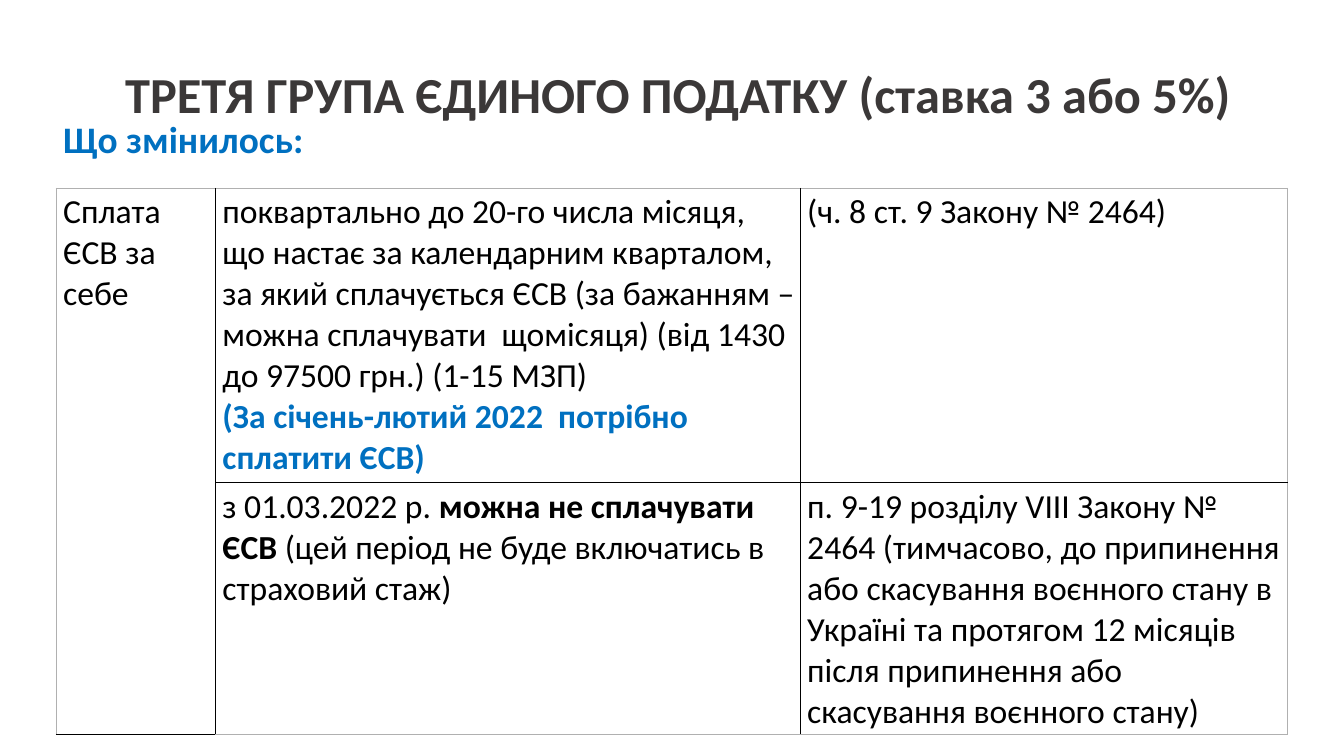
import pptx
import pptx.util
import pptx.dml.color
import pptx.enum.text
import pptx.oxml
import pptx.oxml.ns

FONT = "Calibri"
BLACK, BLUE, GREY, FRAME = "000000", "0070C0", "3B3838", "B0B0B0"
INSETS = (4.8, 2.4, 4, 2.4)  # points: left, top, right, bottom
COLUMNS = (1.58, 5.8, 4.83)
ROWS = (2.92, 2.5)

# Each cell is a list of paragraphs, each paragraph a list of (text, bold, colour).
PAYMENT_CELLS = {
    (0, 0): [[("Сплата ЄСВ за себе", False, BLACK)]],
    (0, 1): [
        [("поквартально до 20-го числа місяця, що настає за календарним кварталом, "
          "за який сплачується ЄСВ (за бажанням – можна сплачувати  щомісяця) "
          "(від 1430 до 97500 грн.) (1-15 МЗП)", False, BLACK)],
        [("(За січень-лютий 2022  потрібно сплатити ЄСВ)", True, BLUE)],
    ],
    (0, 2): [[("(ч. 8 ст. 9 Закону № 2464)", False, BLACK)]],
    (1, 1): [[("з 01.03.2022 р. ", False, BLACK),
              ("можна не сплачувати ЄСВ ", True, BLACK),
              ("(цей період не буде включатись в страховий стаж)", False, BLACK)]],
    (1, 2): [[("п. 9-19 розділу VIII Закону № 2464 (тимчасово, до припинення або "
               "скасування воєнного стану в Україні та протягом 12 місяців після "
               "припинення або скасування воєнного стану)", False, BLACK)]],
}


def rgb(colour):
    return pptx.dml.color.RGBColor.from_string(colour)


def inches(values):
    return [pptx.util.Inches(v) for v in values]


def set_insets(target):
    """Set the margins of a cell or a text frame."""
    (target.margin_left, target.margin_top,
     target.margin_right, target.margin_bottom) = [pptx.util.Pt(v) for v in INSETS]


def add_run(p, text, size, bold, colour):
    r = p.add_run()
    r.text = text
    r.font.name = FONT
    r.font.size = pptx.util.Pt(size)
    r.font.bold = bold
    r.font.color.rgb = rgb(colour)


def add_heading(s, box, text, size, colour, align, anchor):
    tf = s.shapes.add_textbox(*inches(box)).text_frame
    tf.word_wrap = True
    tf.vertical_anchor = anchor
    set_insets(tf)
    p = tf.paragraphs[0]
    p.alignment = align
    p.line_spacing = 0.9
    add_run(p, text, size, True, colour)


def set_borders(cell, row, column):
    """Draw grey outer and black inner sides; lines must precede the fill in tcPr."""
    outer = {"lnL": column == 0, "lnR": column == len(COLUMNS) - 1,
             "lnT": row == 0, "lnB": row == len(ROWS) - 1}
    tc_pr = cell._tc.get_or_add_tcPr()
    for i, (side, is_outer) in enumerate(outer.items()):
        tc_pr.insert(i, pptx.oxml.parse_xml(
            f'<a:{side} {pptx.oxml.ns.nsdecls("a")} w="{pptx.util.Pt(1)}"><a:solidFill>'
            f'<a:srgbClr val="{FRAME if is_outer else BLACK}"/></a:solidFill></a:{side}>'))


def add_payment_table(s, left, top):
    box = (left, top, sum(COLUMNS), sum(ROWS))
    table = s.shapes.add_table(len(ROWS), len(COLUMNS), *inches(box)).table
    table.first_row = table.horz_banding = False
    for column, width in zip(table.columns, inches(COLUMNS)):
        column.width = width
    for row, height in zip(table.rows, inches(ROWS)):
        row.height = height
    table.cell(0, 0).merge(table.cell(1, 0))
    for i, cell in enumerate(table.iter_cells()):
        set_insets(cell)
        cell.fill.background()
        set_borders(cell, *divmod(i, len(COLUMNS)))
    for position, paragraphs in PAYMENT_CELLS.items():
        tf = table.cell(*position).text_frame
        for i, runs in enumerate(paragraphs):
            p = tf.add_paragraph() if i else tf.paragraphs[0]
            for text, bold, colour in runs:
                add_run(p, text, 24, bold, colour)


def build_tax_slide(prs):
    s = prs.slides.add_slide(prs.slide_layouts[6])
    align, anchor = pptx.enum.text.PP_ALIGN, pptx.enum.text.MSO_ANCHOR
    add_heading(s, (0, 0.58, 13.33, 0.76),
                " ТРЕТЯ ГРУПА ЄДИНОГО ПОДАТКУ (ставка 3 або 5%)",
                36, GREY, align.CENTER, anchor.MIDDLE)
    add_payment_table(s, 0.56, 1.87)
    add_heading(s, (0.56, 1.17, 11.27, 0.57), "Що змінилось:",
                26.7, BLUE, align.JUSTIFY, anchor.TOP)


def main():
    prs = pptx.Presentation()
    prs.slide_width, prs.slide_height = inches((13.33, 7.5))
    build_tax_slide(prs)
    prs.save("out.pptx")


if __name__ == "__main__":
    main()
